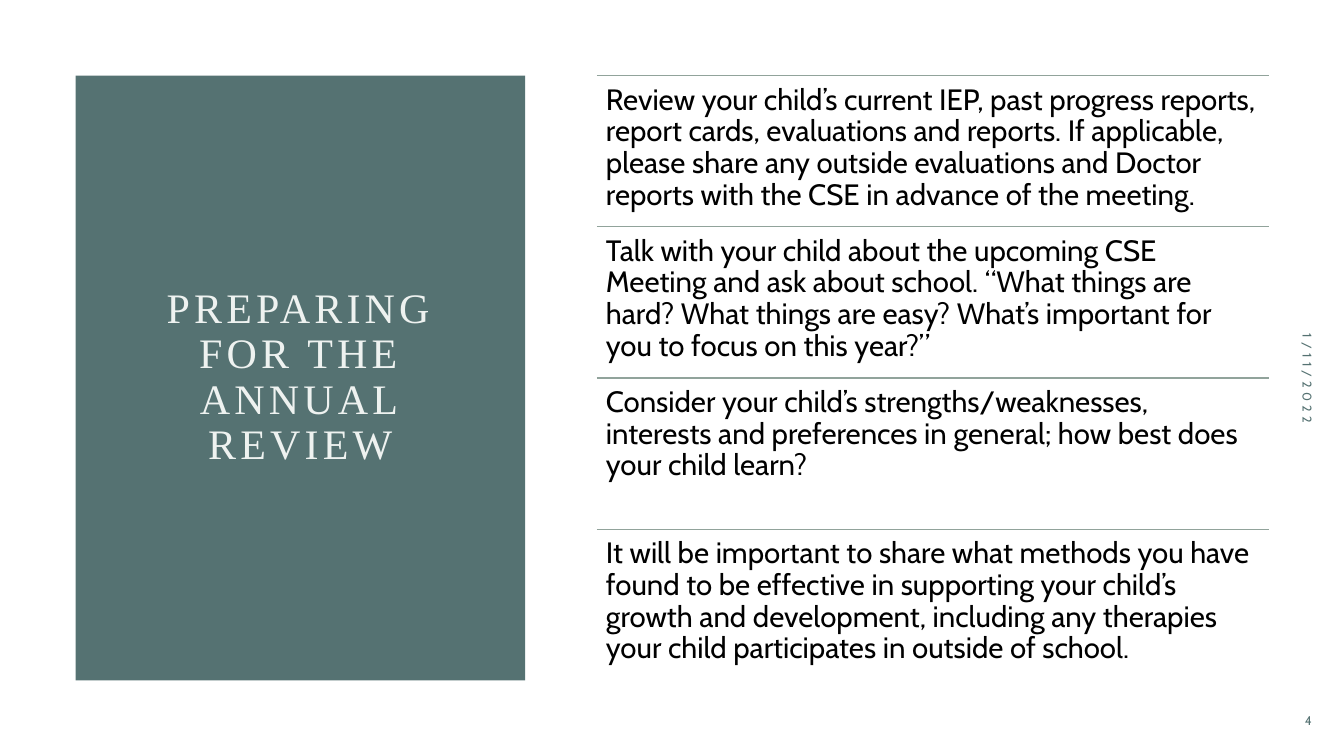
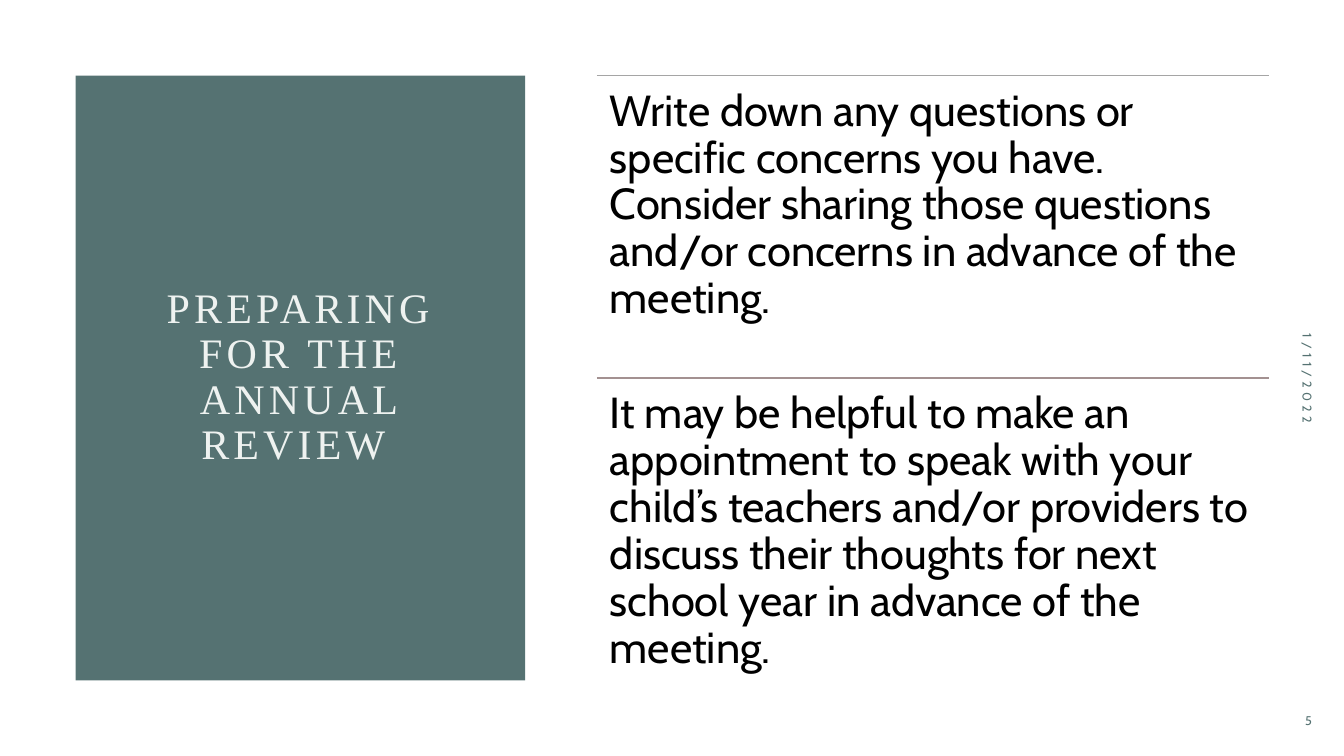
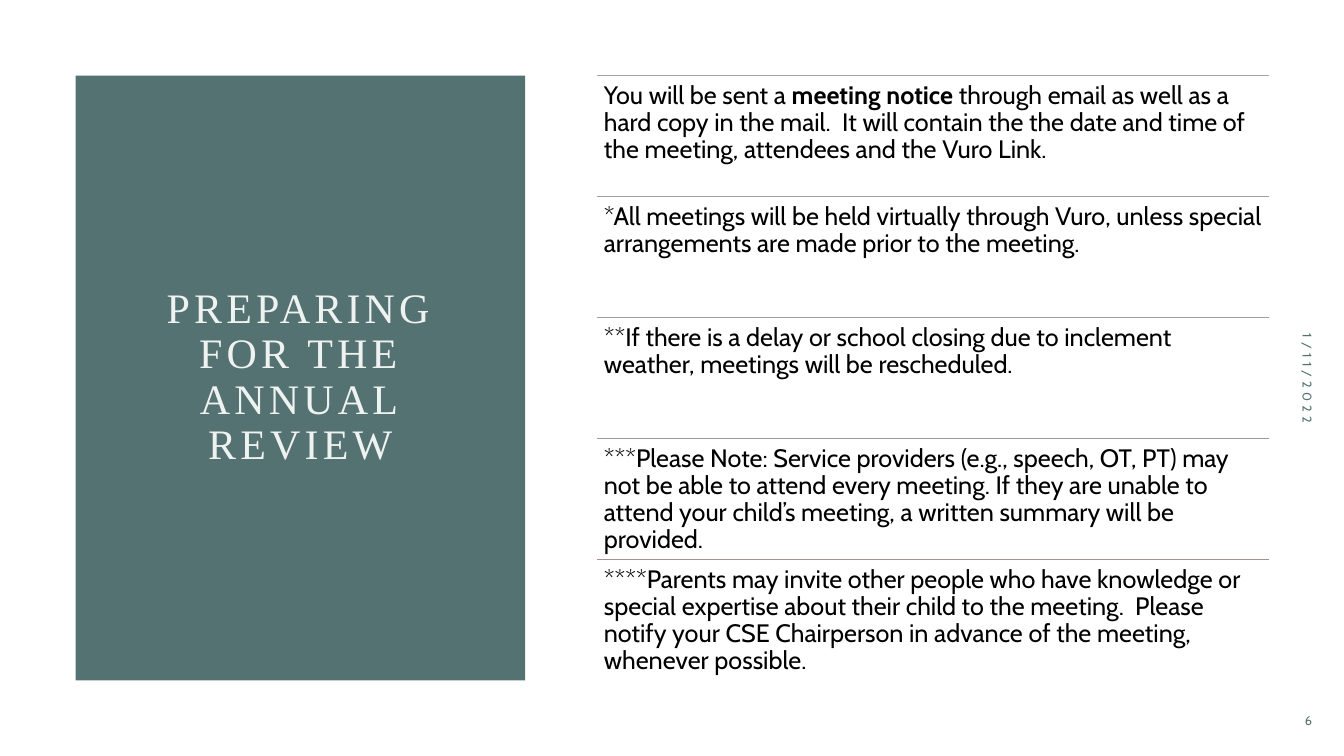
from lxml.etree import SubElement
from pptx import Presentation
from pptx.dml.color import RGBColor
from pptx.enum.shapes import MSO_CONNECTOR, MSO_SHAPE
from pptx.enum.text import MSO_ANCHOR as Anchor, PP_ALIGN as Align
from pptx.oxml.ns import qn
from pptx.util import Inches, Pt

COLORS = {"panel": "557272", "title": "EEF2F0", "body": "000000"}
BODY_FONT = "Cabin"
MARGIN = 0.75
CONTENT_HEIGHT = 6
LIST_LEFT, LIST_WIDTH = 5.92, 6.67

TITLE_STYLE = {
    "frame": {"vertical_anchor": Anchor.MIDDLE},
    "paragraph": {"alignment": Align.CENTER, "line_spacing": 0.9},
    "font": {"name": "Times New Roman", "size": Pt(30)},
    "color": "title", "tracking": 3,
}
DATE_STYLE = {
    "frame": {"vertical_anchor": Anchor.MIDDLE},
    "paragraph": {"alignment": Align.CENTER, "space_after": Pt(6)},
    "font": {"name": BODY_FONT, "size": Pt(9)},
    "color": "panel", "tracking": 3,
}
NUMBER_STYLE = DATE_STYLE | {
    "paragraph": {"alignment": Align.RIGHT, "space_after": Pt(6)},
}

SLIDES = [
    {
        "number": "4", "title": "PREPARING FOR THE ANNUAL REVIEW",
        "size": 21, "inset": 0.09,
        "items": [
            ("91A39B", ["Review your child’s current IEP, past progress reports, report cards, "
                        "evaluations and reports. If applicable, please share any outside "
                        "evaluations and Doctor reports with the CSE in advance of the meeting."]),
            ("91A39B", ["Talk with your child about the upcoming CSE Meeting and ask about school. "
                        "“What things are hard? What things are easy? What’s important for you to "
                        "focus on this year?”"]),
            ("91A39B", ["Consider your child’s strengths/weaknesses, interests and preferences in "
                        "general; how best does your child learn?"]),
            ("91A39B", ["It will be important to share what methods you have found to be effective "
                        "in supporting your child’s growth and development, including any "
                        "therapies your child participates in outside of school."]),
        ],
    },
    {
        "number": "5", "title": "PREPARING FOR THE ANNUAL REVIEW ",
        "size": 31, "inset": 0.13,
        "items": [
            ("A5A5A5", ["Write down any questions or specific concerns you have. Consider sharing "
                        "those questions and/or concerns in advance of the meeting."]),
            ("A39191", ["It may be helpful to make an appointment to speak with your child’s "
                        "teachers and/or providers to discuss their thoughts for next school year "
                        "in advance of the meeting."]),
        ],
    },
    {
        "number": "6", "title": "PREPARING FOR THE ANNUAL REVIEW",
        "size": 18, "inset": 0.07,
        "items": [
            # Every second run is bold.
            ("A5A5A5", ["You will be sent a ", "meeting notice ",
                        "through email as well as a hard copy in the mail.  It will contain the "
                        "the date and time of the meeting, attendees and the Vuro Link."]),
            ("A4A0A0", ["*All meetings will be held virtually through Vuro, unless special "
                        "arrangements are made prior to the meeting."]),
            ("A49B9B", ["**If there is a delay or school closing due to inclement weather, "
                        "meetings will be rescheduled."]),
            ("A39696", ["***Please Note: Service providers (e.g., speech, OT, PT) may not be able "
                        "to attend every meeting. If they are unable to attend your child’s "
                        "meeting, a written summary will be provided."]),
            ("A39191", ["****Parents may invite other people who have knowledge or special "
                        "expertise about their child to the meeting.  Please notify your CSE "
                        "Chairperson in advance of the meeting, whenever possible."]),
        ],
    },
]


def add_text(slide, box, runs, style):
    """Add a one-paragraph text box; every second run is bold."""
    text_box = slide.shapes.add_textbox(*map(Inches, box))
    frame = text_box.text_frame
    frame.word_wrap = True
    paragraph = frame.paragraphs[0]
    for target, part in ((frame, "frame"), (paragraph, "paragraph")):
        for name, value in style[part].items():
            setattr(target, name, value)
    for index, text in enumerate(runs):
        run = paragraph.add_run()
        run.text = text
        for name, value in style["font"].items():
            setattr(run.font, name, value)
        run.font.bold = index % 2 == 1
        run.font.color.rgb = RGBColor.from_string(COLORS[style["color"]])
        if "tracking" in style:
            run.font._element.set("spc", str(style["tracking"] * 100))
    return text_box


prs = Presentation()
prs.slide_width, prs.slide_height = Inches(13.33), Inches(7.5)
blank = prs.slide_layouts[6]

for content in SLIDES:
    slide = prs.slides.add_slide(blank)

    panel = slide.shapes.add_shape(
        MSO_SHAPE.RECTANGLE, Inches(MARGIN), Inches(MARGIN), Inches(4.46), Inches(CONTENT_HEIGHT))
    panel.shadow.inherit = False
    panel.fill.solid()
    panel.fill.fore_color.rgb = RGBColor.from_string(COLORS["panel"])
    panel.line.fill.background()

    add_text(slide, (1.5, 1.5, 2.96, 4.5), [content["title"]], TITLE_STYLE)
    date = add_text(slide, (10.72, 3.53, 4.5, 0.45), ["1/11/2022"], DATE_STYLE)
    date.rotation = 90
    add_text(slide, (12.16, 6.95, 0.95, 0.4), [content["number"]], NUMBER_STYLE)

    sides = ("left", "top", "right", "bottom")
    item_style = {
        "frame": {f"margin_{side}": Inches(content["inset"]) for side in sides},
        "paragraph": {"line_spacing": 0.9},
        "font": {"name": BODY_FONT, "size": Pt(content["size"])},
        "color": "body",
    }
    row_height = CONTENT_HEIGHT / len(content["items"])
    for row, (rule_color, runs) in enumerate(content["items"]):
        top = MARGIN + row * row_height
        rule = slide.shapes.add_connector(
            MSO_CONNECTOR.STRAIGHT, Inches(LIST_LEFT), Inches(top),
            Inches(LIST_LEFT + LIST_WIDTH), Inches(top))
        rule.line.color.rgb = RGBColor.from_string(rule_color)
        rule.line.width = Pt(1)
        SubElement(rule._element.spPr, qn("a:effectLst"))
        add_text(slide, (LIST_LEFT, top, LIST_WIDTH, row_height), runs, item_style)

prs.save("out.pptx")
